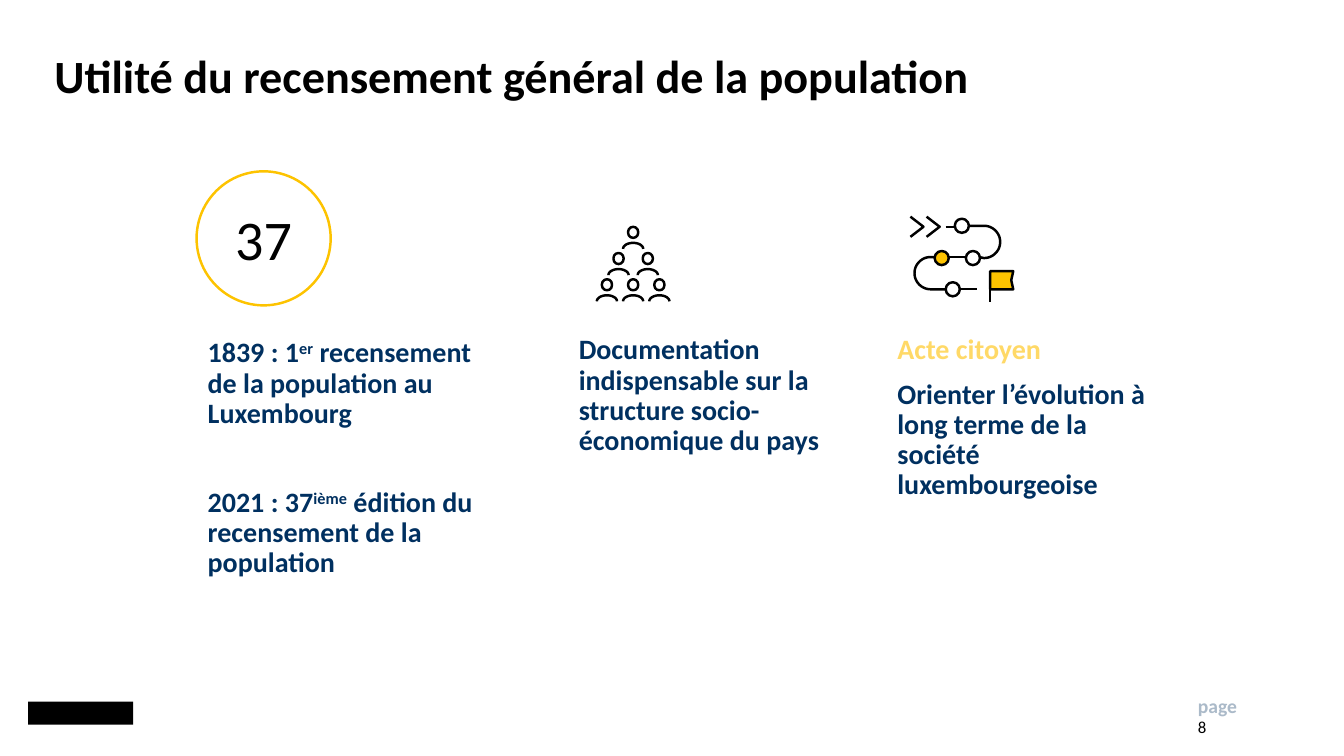
"""Build the slide on the purpose of the general population census."""
import math
from dataclasses import dataclass
from typing import Any, NamedTuple

from lxml import etree
from pptx import Presentation
from pptx.dml.color import RGBColor
from pptx.enum import shapes, text
from pptx.oxml import ns
from pptx.util import Inches, Pt

Point = tuple[float, float]


@dataclass(frozen=True)
class Theme:
    font: str = "Calibri"
    black: str = "000000"
    white: str = "FFFFFF"
    navy: str = "003060"
    yellow: str = "FDC300"
    pale_yellow: str = "FFD967"
    grey: str = "ABBAC9"
    title: float = 33
    body: float = 20
    number: float = 40
    label: float = 14
    page: float = 12
    stroke: float = 1.75


class Box(NamedTuple):
    x: float
    y: float
    w: float
    h: float


class Para(NamedTuple):
    text: str
    color: str
    before: float = 0


class Column(NamedTuple):
    idx: int
    box: Box
    paras: tuple[Para, ...]


class PeopleRow(NamedTuple):
    top: float
    pitch: float
    count: int


T = Theme()

COLUMNS = (
    Column(1, Box(2.06, 3.36, 2.76, 2.56), (
        Para("1839 : 1^er^ recensement de la population au Luxembourg", T.navy),
        Para("2021 : 37^ième^ édition du recensement de la population", T.navy, 42))),
    Column(2, Box(5.74, 3.33, 2.76, 2.16), (
        Para("Documentation indispensable sur la structure socio-économique du pays", T.navy),)),
    Column(3, Box(8.9, 3.33, 2.76, 2.16), (
        Para("Acte citoyen", T.pale_yellow),
        Para("Orienter l’évolution à long terme de la société luxembourgeoise", T.navy, 10))),
)
PEOPLE = (PeopleRow(2.25, 0, 1), PeopleRow(2.51, 0.29, 2), PeopleRow(2.77, 0.26, 3))
PEOPLE_CENTER = 6.28
STOPS = ((9.47, 2.17, None), (9.27, 2.49, T.yellow), (9.58, 2.49, None), (9.38, 2.8, None))
SEGMENTS = (
    ((9.38, 2.25), (9.47, 2.25)),
    ((9.4, 2.55), (9.58, 2.55)),
    ((9.52, 2.87), (9.69, 2.87)),
    ((9.82, 2.69), (9.82, 3.0)),
)


def place(sp: Any, box: Box) -> None:
    sp.left, sp.top, sp.width, sp.height = map(Inches, box)


def write(p: Any, content: str, *, size: float, color: str, bold: bool = False,
          align: Any = text.PP_ALIGN.LEFT, before: float = 0, spacing: float = 1) -> None:
    """Fill a paragraph; parts between carets are superscript."""
    pPr = p._p.get_or_add_pPr()
    pPr.set("marL", "0")
    pPr.set("indent", "0")
    etree.SubElement(pPr, ns.qn("a:buNone"))
    p.alignment, p.line_spacing, p.space_before = align, spacing, Pt(before)
    for i, part in enumerate(content.split("^")):
        r = p.add_run()
        r.text = part
        r.font.name, r.font.size, r.font.bold = T.font, Pt(size), bold
        r.font.color.rgb = RGBColor.from_string(color)
        if i % 2:
            r._r.get_or_add_rPr().set("baseline", "30000")


def frame(sp: Any, anchor: Any = text.MSO_ANCHOR.TOP) -> Any:
    tf = sp.text_frame
    tf.word_wrap, tf.auto_size, tf.vertical_anchor = True, text.MSO_AUTO_SIZE.NONE, anchor
    tf.margin_left = tf.margin_right = tf.margin_top = tf.margin_bottom = 0
    return tf


def paint(sp: Any, fill: str | None = None, line: str | None = T.black) -> Any:
    sp.shadow.inherit = False
    for part, color in ((sp.fill, fill), (sp.line.fill, line)):
        if color:
            part.solid()
            part.fore_color.rgb = RGBColor.from_string(color)
        else:
            part.background()
    if line:
        sp.line.width = Pt(T.stroke)
    return sp


def preset(s: Any, kind: Any, box: Box, **colors: str | None) -> Any:
    return paint(s.shapes.add_shape(kind, *map(Inches, box)), **colors)


def outline(s: Any, points: list[Point], fill: str | None = None) -> None:
    first, *rest = [(Inches(x), Inches(y)) for x, y in points]
    builder = s.shapes.build_freeform(*first)
    builder.add_line_segments(rest, close=fill is not None)
    paint(builder.convert_to_shape(), fill)


def arc(cx: float, cy: float, rx: float, ry: float, start: int, end: int) -> list[Point]:
    """Sample an elliptical arc between two angles in degrees."""
    angles = [math.radians(start + (end - start) * i / 24) for i in range(25)]
    return [(cx + rx * math.cos(a), cy + ry * math.sin(a)) for a in angles]


def draw_people(s: Any) -> None:
    for row in PEOPLE:
        for i in range(row.count):
            cx = PEOPLE_CENTER + (i - (row.count - 1) / 2) * row.pitch
            head = preset(s, shapes.MSO_SHAPE.ROUNDED_RECTANGLE, Box(cx - 0.05, row.top, 0.1, 0.11))
            head.adjustments[0] = 0.5
            outline(s, arc(cx, row.top + 0.22, 0.1, 0.06, 180, 360))


def draw_route(s: Any) -> None:
    outline(s, [(9.27, 2.55), *arc(9.23, 2.71, 0.16, 0.16, 270, 90), (9.39, 2.87)])
    outline(s, [(9.6, 2.24), *arc(9.76, 2.4, 0.16, 0.16, -90, 90), (9.71, 2.55)])
    for start, end in SEGMENTS:
        c = s.shapes.add_connector(shapes.MSO_CONNECTOR.STRAIGHT, *map(Inches, (*start, *end)))
        c.line.color.rgb, c.line.width = RGBColor.from_string(T.black), Pt(T.stroke)
        etree.SubElement(c._element.spPr, ns.qn("a:effectLst"))
    for x, y, fill in STOPS:
        preset(s, shapes.MSO_SHAPE.OVAL, Box(x, y, 0.14, 0.14), fill=fill)
    outline(s, [(9.82, 2.69), (10.05, 2.69), (10.03, 2.78), (10.05, 2.87), (9.82, 2.87)], T.yellow)
    for x in (9.03, 9.19):
        outline(s, [(x, 2.15), (x + 0.13, 2.25), (x, 2.35)])


def main() -> None:
    prs = Presentation()
    prs.slide_width, prs.slide_height = Inches(13.33), Inches(7.5)
    s = prs.slides.add_slide(prs.slide_layouts.get_by_name("Comparison"))

    title = s.shapes.title
    place(title, Box(0.54, 0.17, 12.23, 1.22))
    write(frame(title, text.MSO_ANCHOR.MIDDLE).paragraphs[0],
          "Utilité du recensement général de la population",
          size=T.title, color=T.black, bold=True, spacing=0.9)

    bodies = {ph.placeholder_format.idx: ph for ph in s.placeholders}
    for column in COLUMNS:
        place(bodies[column.idx], column.box)
        tf = frame(bodies[column.idx])
        for i, para in enumerate(column.paras):
            write(tf.add_paragraph() if i else tf.paragraphs[0], para.text, size=T.body,
                  color=para.color, bold=True, before=para.before, spacing=0.9)
    spare = bodies[4]._element
    spare.getparent().remove(spare)

    circle = preset(s, shapes.MSO_SHAPE.OVAL, Box(1.95, 1.7, 1.33, 1.33), fill=T.white, line=T.yellow)
    write(frame(circle, text.MSO_ANCHOR.MIDDLE).paragraphs[0], "37", size=T.number,
          color=T.black, align=text.PP_ALIGN.CENTER)
    draw_people(s)
    draw_route(s)

    preset(s, shapes.MSO_SHAPE.RECTANGLE, Box(0.28, 6.96, 1.04, 0.23), fill=T.black, line=None)
    for content, box, size, color, bold in (
            ("page", Box(11.88, 6.88, 0.59, 0.2), T.label, T.grey, True),
            ("8", Box(11.88, 7.11, 0.67, 0.28), T.page, T.black, False)):
        sp = s.shapes.add_textbox(*map(Inches, box))
        write(frame(sp).paragraphs[0], content, size=size, color=color, bold=bold)
    prs.save("out.pptx")


if __name__ == "__main__":
    main()
